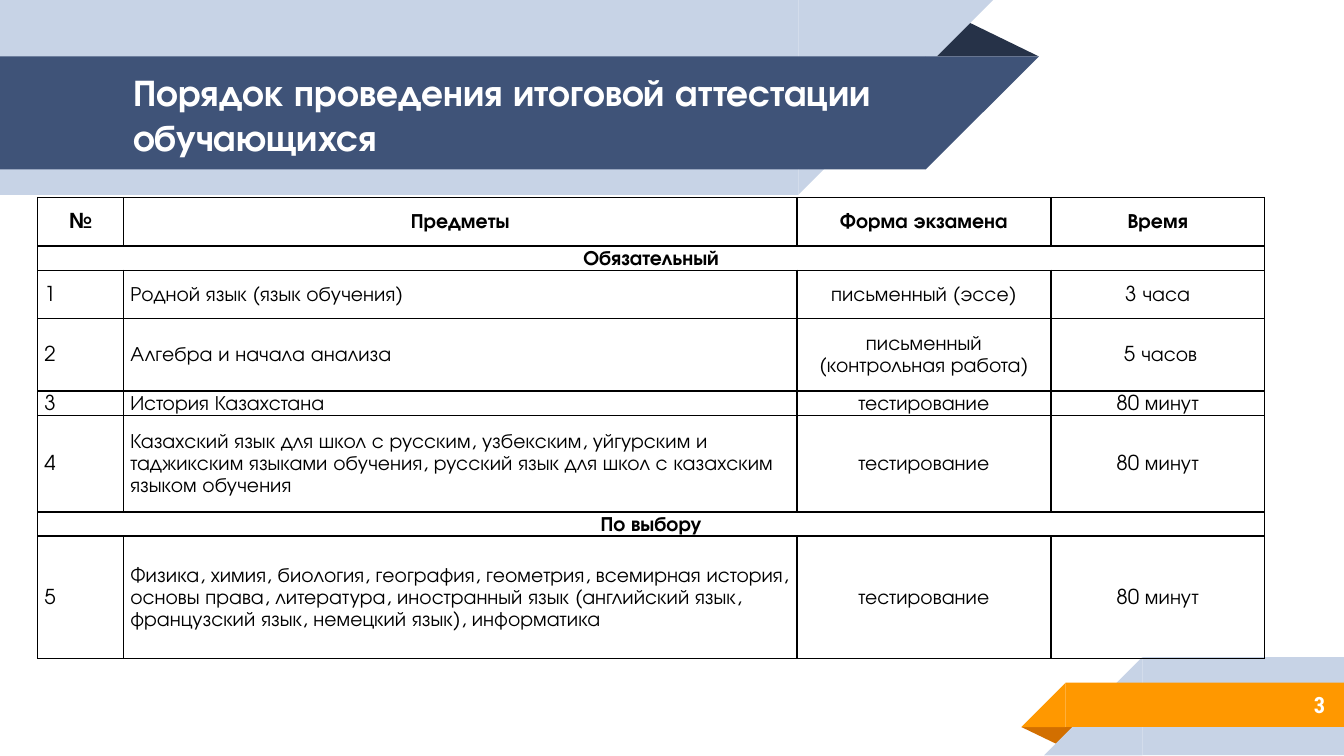
import pptx
import pptx.util
from lxml import etree
from pptx.dml.color import RGBColor
from pptx.enum.shapes import MSO_SHAPE
from pptx.enum.text import MSO_ANCHOR, MSO_AUTO_SIZE, PP_ALIGN
from pptx.oxml.ns import qn
from pptx.util import Inches

COLORS = {"pale": "C7D3E6", "blue": "3F5378", "navy": "263248", "orange": "FF9800",
          "rust": "D26F00", "white": "FFFFFF", "black": "000000"}
FONT = "TeX Gyre Adventor"


def style(p, size, color, bold, align, font=FONT):
    p.alignment = align
    p.font.name = font
    p.font.size = pptx.util.Pt(size)
    p.font.bold = bold
    p.font.color.rgb = RGBColor.from_string(COLORS[color])


def add_borders(cell):
    """Draw a thin black line on all four sides; must come before the cell fill."""
    tcPr = cell._tc.get_or_add_tcPr()
    for side in ("a:lnL", "a:lnR", "a:lnT", "a:lnB"):
        ln = etree.SubElement(tcPr, qn(side), w="9525")
        fill = etree.SubElement(ln, qn("a:solidFill"))
        etree.SubElement(fill, qn("a:srgbClr"), val=COLORS["black"])


prs = pptx.Presentation()
prs.slide_width, prs.slide_height = Inches(10), Inches(10 * 9 / 16)
s = prs.slides.add_slide(prs.slide_layouts[5])

# Ribbons: kind, left, top, width, height, colour, rotation, flip
RECT, CORNER, FOLD = MSO_SHAPE.RECTANGLE, MSO_SHAPE.RIGHT_TRIANGLE, MSO_SHAPE.ISOSCELES_TRIANGLE
ribbons = [
    (FOLD, 7.6, 5.41, 0.43, 0.14, "rust", 180, None),
    (RECT, 8.5, 4.89, 1.5, 0.73, "pale", 0, None),
    (CORNER, 7.77, 4.89, 0.73, 0.73, "pale", 0, "flipH"),
    (RECT, 7.93, 5.08, 2.07, 0.33, "orange", 0, None),
    (CORNER, 7.6, 5.08, 0.33, 0.33, "orange", 0, "flipH"),
    (FOLD, 6.88, 0.14, 0.85, 0.28, "navy", 0, None),
    (RECT, 0, 0, 5.94, 1.45, "pale", 0, None),
    (CORNER, 5.94, 0, 1.45, 1.45, "pale", 0, "flipV"),
    (RECT, 0, 0.42, 6.89, 0.84, "blue", 0, None),
    (CORNER, 6.89, 0.42, 0.84, 0.84, "blue", 0, "flipV"),
]
for kind, left, top, width, height, color, rotation, flip in ribbons:
    sp = s.shapes.add_shape(kind, Inches(left), Inches(top), Inches(width), Inches(height))
    sp.shadow.inherit = False
    sp.fill.solid()
    sp.fill.fore_color.rgb = RGBColor.from_string(COLORS[color])
    sp.line.fill.background()
    sp.rotation = rotation
    if kind == FOLD:
        sp.adjustments[0] = 0.324
    if flip:
        sp._element.spPr.xfrm.set(flip, "1")

# Title and slide number, in front of the ribbons
title = s.shapes.title
s.shapes._spTree.append(title._element)
title.left, title.top, title.width, title.height = Inches(0.89), Inches(0.43), Inches(6.01), Inches(0.84)
number = s.shapes.add_textbox(Inches(8.33), Inches(5.07), Inches(1.63), Inches(0.35))
for sp, text in ((title, "Порядок проведения итоговой аттестации обучающихся"), (number, "3")):
    tf = sp.text_frame
    tf.text = text
    tf.word_wrap = True
    tf.auto_size = MSO_AUTO_SIZE.NONE
    tf.vertical_anchor = MSO_ANCHOR.MIDDLE
    tf.margin_left = tf.margin_right = tf.margin_top = tf.margin_bottom = Inches(0.1)
style(title.text_frame.paragraphs[0], 20, "white", True, PP_ALIGN.LEFT)
style(number.text_frame.paragraphs[0], 12, "white", True, PP_ALIGN.RIGHT, "Roboto Condensed")

# Exam table; a row with one entry is a section heading across all columns
col_widths = [0.64, 5.01, 1.89, 1.59]
row_heights = [0.36, 0.18, 0.36, 0.54, 0.18, 0.72, 0.18, 0.91]
rows = [
    ["№", "Предметы", "Форма экзамена", "Время"],
    ["Обязательный"],
    ["1", "Родной язык (язык обучения)", "письменный (эссе)", "3 часа"],
    ["2", "Алгебра и начала анализа", "письменный (контрольная работа)", " 5 часов"],
    ["3", "История Казахстана", "тестирование", "80 минут"],
    ["4", "Казахский язык для школ с русским, узбекским, уйгурским и таджикским языками "
          "обучения, русский язык для школ с казахским языком обучения", "тестирование", "80 минут"],
    ["По выбору"],
    ["5", "Физика, химия, биология, география, геометрия, всемирная история, основы права, "
          "литература, иностранный язык (английский язык, французский язык, немецкий язык), "
          "информатика", "тестирование", "80 минут"],
]
table = s.shapes.add_table(len(rows), len(col_widths), Inches(0.28), Inches(1.47),
                           Inches(sum(col_widths)), Inches(sum(row_heights))).table
table.first_row = table.horz_banding = False
for column, width in zip(table.columns, col_widths):
    column.width = Inches(width)
for r, (texts, height) in enumerate(zip(rows, row_heights)):
    table.rows[r].height = Inches(height)
    section = len(texts) == 1
    if section:
        table.cell(r, 0).merge(table.cell(r, len(col_widths) - 1))
    bold = section or r == 0
    for c in range(len(col_widths)):
        cell = table.cell(r, c)
        add_borders(cell)
        cell.fill.background()
        cell.vertical_anchor = MSO_ANCHOR.MIDDLE
        cell.margin_left = cell.margin_right = Inches(0.05)
        cell.margin_top = cell.margin_bottom = 0
        if c < len(texts):
            cell.text_frame.text = texts[c]
        p = cell.text_frame.paragraphs[0]
        p.line_spacing = 1.15
        style(p, 11, "black", bold, PP_ALIGN.CENTER if bold or c > 1 else PP_ALIGN.LEFT)

prs.save("out.pptx")
